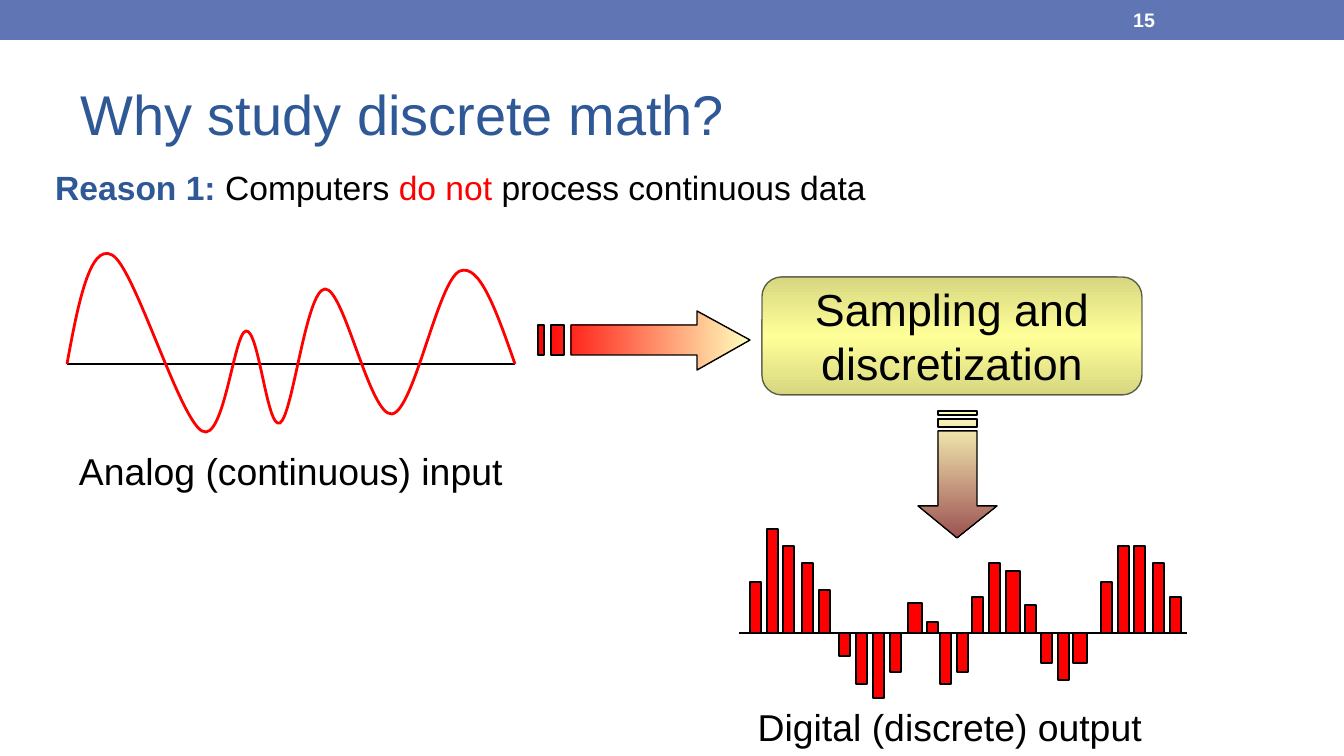
from pptx import Presentation
from pptx.dml.color import RGBColor
from pptx.enum.shapes import MSO_CONNECTOR, MSO_SHAPE
from pptx.enum.text import MSO_ANCHOR, PP_ALIGN
from pptx.oxml import parse_xml
from pptx.oxml.ns import nsdecls, qn
from pptx.util import Pt
from lxml import etree

SCALE = 914400 / 134.4
RECT, ROUND = MSO_SHAPE.RECTANGLE, MSO_SHAPE.ROUNDED_RECTANGLE
LINE = MSO_CONNECTOR.STRAIGHT
LEFT, MID = PP_ALIGN.LEFT, PP_ALIGN.CENTER
TOP, CENTER = MSO_ANCHOR.TOP, MSO_ANCHOR.MIDDLE
BLACK, RED, WHITE = "000000", "FF0000", "FFFFFF"
BLUE, BAND, CREAM = "2F5897", "6076B4", "FFFFBD"

WAVE = [
    (67, 364), (78, 304), (90, 243), (112, 255),
    (134, 266), (179, 418), (202, 431),
    (224, 444), (234, 332), (246, 331),
    (259, 329), (267, 430), (280, 423),
    (293, 415), (306, 290), (325, 289),
    (344, 288), (370, 417), (392, 414),
    (414, 411), (438, 280), (460, 271),
    (480, 263), (497, 313), (515, 364),
]
BARS = {
    750: 51, 767: 104, 783: 87, 802: 70, 819: 43,
    839: -23, 856: -51, 873: -65, 890: -39,
    908: 30, 927: 11, 940: -51, 957: -39,
    972: 36, 989: 70, 1006: 62, 1025: 28,
    1041: -30, 1058: -47, 1073: -30,
    1101: 51, 1118: 87, 1134: 87, 1153: 70, 1170: 36,
}
WIDE = {908, 1006, 1073}
BASE = 633


def px(n):
    return round(n * SCALE)


def color(code):
    return RGBColor.from_string(code)


def box(x, y, w, h):
    return [(x, y), (x + w, y), (x + w, y + h), (x, y + h)]


class Deck:
    font = "Arial"

    def __init__(self, w, h):
        self.file = Presentation()
        self.file.slide_width, self.file.slide_height = px(w), px(h)
        self.slide = self.file.slides.add_slide(self.file.slide_layouts[5])
        self.items = self.slide.shapes

    def style(self, run, size, code, bold=False):
        run.font.name = self.font
        run.font.size = Pt(size)
        run.font.bold = bold
        run.font.color.rgb = color(code)

    def label(self, item, text, size, code, bold=False, align=LEFT,
              anchor=TOP, wrap=True):
        frame = item.text_frame
        frame.text = text
        frame.word_wrap = wrap
        frame.vertical_anchor = anchor
        for para in frame.paragraphs:
            para.alignment = align
            for run in para.runs:
                self.style(run, size, code, bold)

    def title(self, area, text, size, code):
        item = self.items.title
        item.left, item.top, item.width, item.height = map(px, area)
        self.label(item, text, size, code, anchor=CENTER)

    def text(self, area, text, size, code, **look):
        item = self.items.add_textbox(*map(px, area))
        self.label(item, text, size, code, **look)

    def rich(self, area, parts, size):
        item = self.items.add_textbox(*map(px, area))
        item.text_frame.word_wrap = True
        para = item.text_frame.paragraphs[0]
        para.space_before = Pt(3.6)
        props = para._p.get_or_add_pPr()
        props.set("marL", str(px(67)))
        props.set("indent", str(px(-48)))
        for words, code, bold in parts:
            run = para.add_run()
            run.text = words
            self.style(run, size, code, bold)

    def shape(self, kind, area, fill, edge=None):
        item = self.items.add_shape(kind, *map(px, area))
        item.shadow.inherit = False
        item.fill.solid()
        item.fill.fore_color.rgb = color(fill)
        self.edge(item, edge)
        return item

    def edge(self, item, code, width=0.75):
        if code:
            item.line.color.rgb = color(code)
            item.line.width = Pt(width)
        else:
            item.line.fill.background()

    def blend(self, item, codes, angle):
        item.fill.background()
        old = item._element.spPr.find(qn("a:noFill"))
        stops = "".join(
            f'<a:gs pos="{100000 * i // (len(codes) - 1)}"><a:srgbClr val="{code}"/></a:gs>'
            for i, code in enumerate(codes))
        old.getparent().replace(old, parse_xml(
            f'<a:gradFill {nsdecls("a")} rotWithShape="1"><a:gsLst>{stops}</a:gsLst>'
            f'<a:lin ang="{angle * 60000}" scaled="0"/></a:gradFill>'))

    def free(self, rings, close=True):
        pen = self.items.build_freeform(*rings[0][0], scale=SCALE)
        for i, ring in enumerate(rings):
            if i:
                pen.move_to(*ring[0])
            pen.add_line_segments(ring[1:], close=close)
        item = pen.convert_to_shape()
        item.shadow.inherit = False
        return item

    def curve(self, points, code, width):
        item = self.free([points], close=False)
        item.fill.background()
        self.edge(item, code, width)
        legs = list(item._element.iter(qn("a:lnTo")))
        for i in range(0, len(legs), 3):
            bend = etree.Element(qn("a:cubicBezTo"))
            legs[i].addprevious(bend)
            for leg in legs[i:i + 3]:
                bend.append(leg[0])
                leg.getparent().remove(leg)

    def arrow(self, rings, codes, angle):
        item = self.free(rings)
        self.blend(item, codes, angle)
        self.edge(item, BLACK)

    def line(self, x1, y1, x2, y2):
        item = self.items.add_connector(LINE, *map(px, (x1, y1, x2, y2)))
        self.edge(item, BLACK)
        etree.SubElement(item._element.spPr, qn("a:effectLst"))


def main():
    deck = Deck(1344, 756)
    deck.shape(RECT, (0, 0, 1344, 40), BAND)
    deck.title((67, 59, 1210, 109), "Why study discrete math?", 30, BLUE)
    deck.rich((23, 160, 1294, 75), [
        ("Reason 1: ", BLUE, True),
        ("Computers ", BLACK, False),
        ("do not ", RED, False),
        ("process continuous data", BLACK, False),
    ], 18)

    deck.line(67, 364, 515, 364)
    deck.curve(WAVE, RED, 1.5)
    deck.text((64, 442, 454, 59), "Analog (continuous) input", 20, BLACK,
              align=MID, wrap=False)

    deck.line(739, BASE, 1187, BASE)
    for left, high in BARS.items():
        wide = 14 if left in WIDE else 11
        deck.shape(RECT, (left, BASE - max(high, 0), wide, abs(high)), RED, BLACK)
    deck.text((743, 698, 414, 59), "Digital (discrete) output", 20, BLACK,
              align=MID, wrap=False)

    step = deck.shape(ROUND, (762, 277, 380, 118), WHITE, BLACK)
    deck.blend(step, ["D7D781", "FFFF99", "D7D781"], 90)
    tint = step._element.spPr.find(qn("a:ln")).find(".//" + qn("a:srgbClr"))
    etree.SubElement(tint, qn("a:alpha"), val="59000")
    deck.label(step, "Sampling and\ndiscretization", 24, BLACK,
               align=MID, anchor=CENTER, wrap=False)

    deck.arrow([
        [(697, 311), (697, 325), (571, 325), (571, 355), (697, 355),
         (697, 370), (750, 340)],
        box(551, 325, 13, 30),
        box(538, 325, 6, 30),
    ], [RED, CREAM], 0)
    deck.arrow([
        [(997, 506), (977, 506), (977, 431), (938, 431), (938, 506),
         (918, 506), (957, 538)],
        box(938, 419, 39, 8),
        box(938, 411, 39, 4),
    ], [CREAM, "9C5252"], 90)
    deck.text((1120, 2, 157, 36), "15", 10.5, WHITE, bold=True, anchor=CENTER)
    deck.file.save("out.pptx")


if __name__ == "__main__":
    main()
